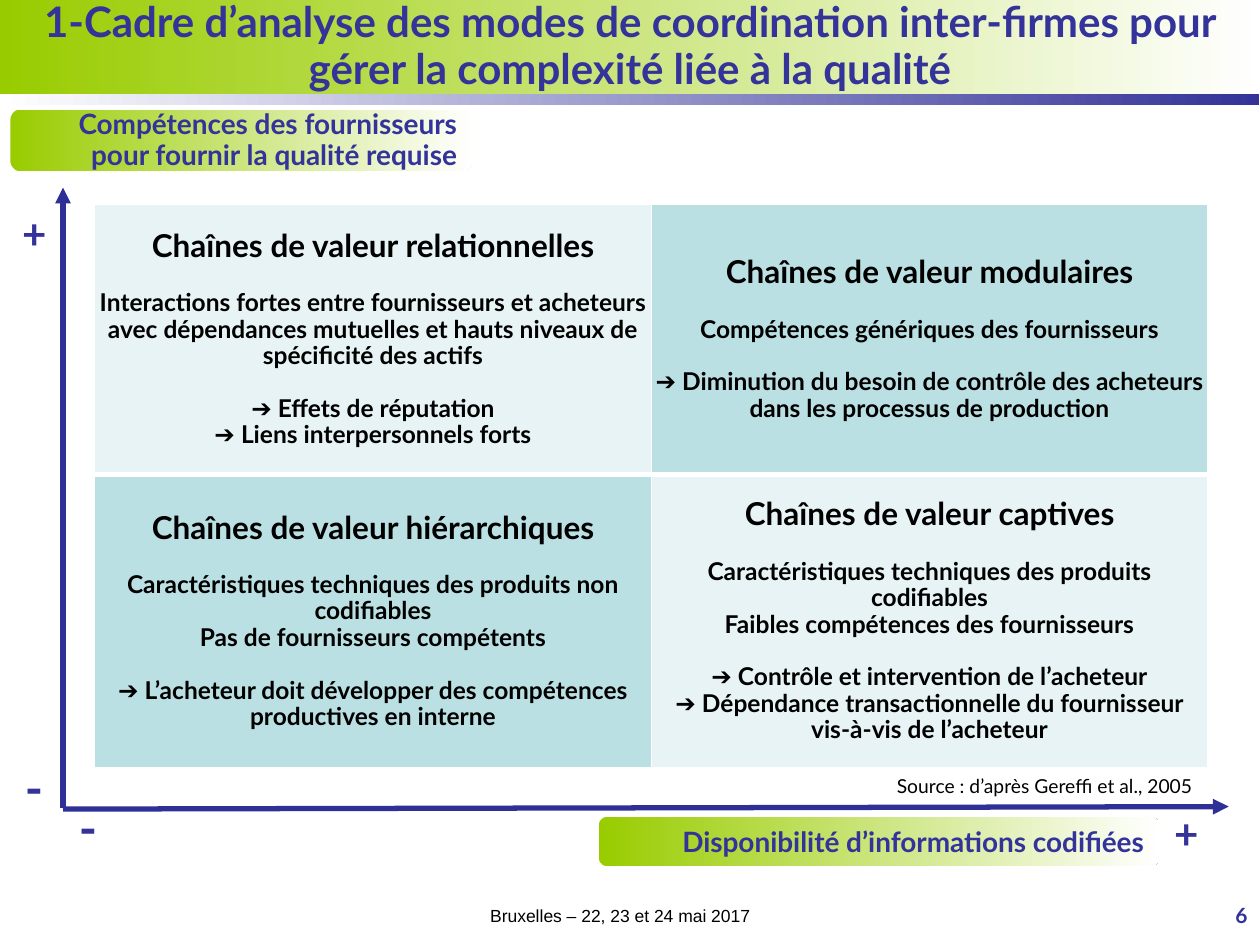
from lxml import etree
from pptx import Presentation
from pptx import util as u
from pptx.dml.color import RGBColor
from pptx.enum import shapes, text
from pptx.oxml.ns import qn

color = RGBColor.from_string
NAVY, LIME, WHITE, BLACK = "333399", "99CC00", "FFFFFF", "000000"
PALE, TEAL = "E7F3F4", "BBE0E3"
RIGHT, CENTER = text.PP_ALIGN.RIGHT, text.PP_ALIGN.CENTER


def style(paragraph, size, alignment, ink=NAVY, bold=True, name="Lato", spacing=1):
    paragraph.alignment = alignment
    paragraph.line_spacing = spacing
    paragraph.font.size = u.Pt(size)
    paragraph.font.bold = bold
    paragraph.font.name = name
    paragraph.font.color.rgb = color(ink)


presentation = Presentation()
presentation.slide_width, presentation.slide_height = u.Cm(25.4), u.Cm(19.05)
slide = presentation.slides.add_slide(presentation.slide_layouts[6])

RECTANGLE, ROUNDED = shapes.MSO_SHAPE.RECTANGLE, shapes.MSO_SHAPE.ROUNDED_RECTANGLE
bands = [
    (RECTANGLE, (0, 1.9, 25.38, 0.21), WHITE, NAVY, "", 12, CENTER, 1),
    (RECTANGLE, (0, 0, 25.4, 1.9), LIME, WHITE,
     "1-Cadre d’analyse des modes de coordination inter-firmes pour gérer la complexité liée à la qualité",
     24, CENTER, 0.92),
    (ROUNDED, (0.21, 2.21, 9.32, 1.24), LIME, WHITE,
     "Compétences des fournisseurs pour fournir la qualité requise", 16, RIGHT, 0.92),
    (ROUNDED, (12.07, 16.47, 11.3, 0.99), LIME, WHITE,
     "Disponibilité d’informations codifiées", 16, RIGHT, 1),
]
for kind, box, start, end, words, size, alignment, spacing in bands:
    shape = slide.shapes.add_shape(kind, *map(u.Cm, box))
    shape.shadow.inherit = False
    shape.line.fill.background()
    shape.fill.gradient()
    shape.fill.gradient_angle = 0
    for stop, shade in zip(shape.fill.gradient_stops, (start, end)):
        stop.color.rgb = color(shade)
    if words:
        frame = shape.text_frame
        frame.word_wrap = True
        frame.vertical_anchor = text.MSO_ANCHOR.MIDDLE
        frame.text = words
        style(frame.paragraphs[0], size, alignment, spacing=spacing)

GAP = 15
quadrants = [
    [(PALE, [("Chaînes de valeur relationnelles", 0),
             ("Interactions fortes entre fournisseurs et acheteurs avec dépendances mutuelles "
              "et hauts niveaux de spécificité des actifs", GAP),
             ("➔ Effets de réputation", GAP),
             ("➔ Liens interpersonnels forts", 0)]),
     (TEAL, [("Chaînes de valeur modulaires", 0),
             ("Compétences génériques des fournisseurs", GAP),
             ("➔ Diminution du besoin de contrôle des acheteurs dans les processus de production", GAP)])],
    [(TEAL, [("Chaînes de valeur hiérarchiques", 0),
             ("Caractéristiques techniques des produits non codifiables", GAP),
             ("Pas de fournisseurs compétents", 0),
             ("➔ L’acheteur doit développer des compétences productives en interne", GAP)]),
     (PALE, [("Chaînes de valeur captives", 0),
             ("Caractéristiques techniques des produits codifiables", GAP),
             ("Faibles compétences des fournisseurs", 0),
             ("➔ Contrôle et intervention de l’acheteur", GAP),
             ("➔ Dépendance transactionnelle du fournisseur vis-à-vis de l’acheteur", 0)])],
]
table = slide.shapes.add_table(2, 2, u.Cm(1.91), u.Cm(4.12), u.Cm(22.44), u.Cm(11.36)).table
for row, height in zip(table.rows, (5.45, 5.91)):
    row.height = u.Cm(height)
for r, quadrant_row in enumerate(quadrants):
    for c, (shade, lines) in enumerate(quadrant_row):
        cell = table.cell(r, c)
        cell.vertical_anchor = text.MSO_ANCHOR.MIDDLE
        cell.margin_left = cell.margin_right = u.Cm(0.05)
        cell.margin_top = cell.margin_bottom = 0
        cell.text = "\n".join(words for words, gap in lines)
        for i, (words, gap) in enumerate(lines):
            paragraph = cell.text_frame.paragraphs[i]
            style(paragraph, 14 if i else 18, CENTER, BLACK, spacing=0.9)
            paragraph.space_before = u.Pt(gap)
        properties = cell._tc.get_or_add_tcPr()
        for side in ("L", "R", "T", "B"):
            inner = (r, side) in ((0, "B"), (1, "T"))
            border = etree.SubElement(properties, qn(f"a:ln{side}"), w=str(u.Pt(3 if inner else 1)))
            paint = etree.SubElement(border, qn("a:solidFill"))
            etree.SubElement(paint, qn("a:srgbClr"), val=WHITE)
        cell.fill.solid()
        cell.fill.fore_color.rgb = color(shade)

for axis in ((1.27, 16.28, 1.27, 3.78), (1.27, 16.31, 24.77, 16.26)):
    connector = slide.shapes.add_connector(shapes.MSO_CONNECTOR.STRAIGHT, *map(u.Cm, axis))
    connector.line.color.rgb = color("2F2F98")
    connector.line.width = u.Pt(3)
    etree.SubElement(connector.line._get_or_add_ln(), qn("a:tailEnd"), type="triangle")
    etree.SubElement(connector._element.spPr, qn("a:effectLst"))

labels = [
    ("-", (1.27, 15.95, 0.94, 1.45), 28, RIGHT, NAVY, True, "Lato"),
    ("+", (23.19, 16.15, 1.22, 1.27), 24, RIGHT, NAVY, True, "Lato"),
    ("-", (0.18, 15.14, 0.94, 1.45), 28, RIGHT, NAVY, True, "Lato"),
    ("+", (-0.03, 4.06, 1.22, 1.27), 24, RIGHT, NAVY, True, "Lato"),
    ("Source : d’après Gereffi et al., 2005", (17.58, 15.49, 6.71, 0.74), 11, RIGHT, BLACK, False, "Lato"),
    ("Bruxelles – 22, 23 et 24 mai 2017", (-0.2, 18.11, 25.4, 0.7), 10, CENTER, BLACK, False, "Arial"),
    ("6", (22.66, 18.06, 2.74, 0.76), 12, RIGHT, NAVY, True, "Lato"),
]
for words, box, size, alignment, ink, bold, name in labels:
    shape = slide.shapes.add_textbox(*map(u.Cm, box))
    shape.text_frame.word_wrap = box[2] > 2 and size != 11
    shape.text_frame.text = words
    style(shape.text_frame.paragraphs[0], size, alignment, ink, bold, name)

presentation.save("out.pptx")
